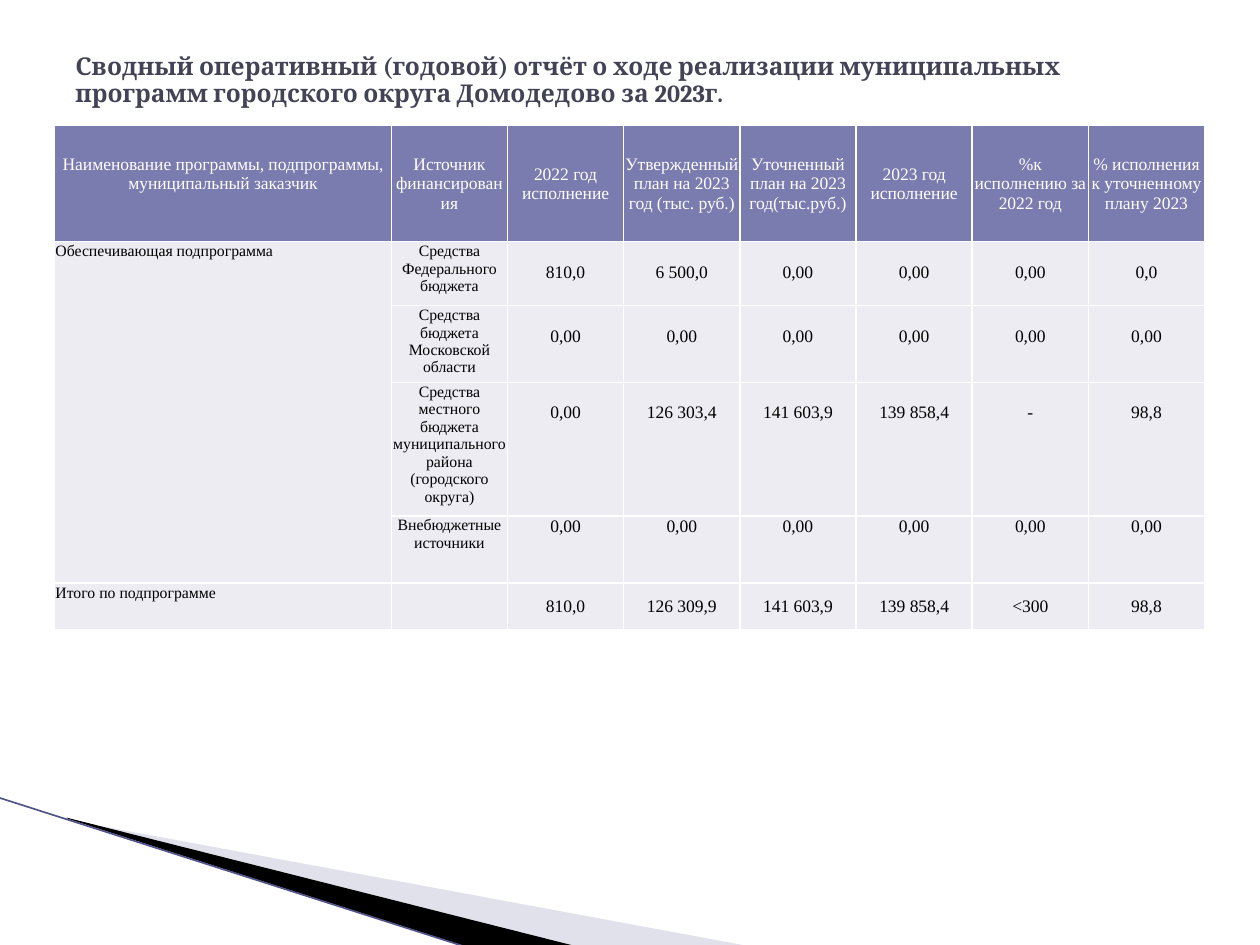
from dataclasses import dataclass
from typing import NamedTuple

from lxml.etree import SubElement
from pptx import Presentation
from pptx.dml.color import RGBColor
from pptx.enum.shapes import MSO_CONNECTOR
from pptx.enum.text import MSO_ANCHOR, PP_ALIGN
from pptx.oxml import parse_xml
from pptx.oxml.ns import nsdecls, qn
from pptx.slide import Slide
from pptx.table import _Cell
from pptx.util import Pt

COLORS = {
    "title": "424456",
    "header": "7A7BAE",
    "body": "ECECF2",
    "white": "FFFFFF",
    "black": "000000",
    "wedge": "B6B6D1",
    "edge": "53548A",
}
TABLE_FONT = "Times New Roman"
INSET = 0.5
BLANK_LINE = 11.5
NAME_WIDTH = 192.4
VALUE_WIDTH = 66.4
HEADER_HEIGHT = 66.5

HEADERS = [
    "Наименование программы, подпрограммы, муниципальный заказчик",
    "Источник финансирования",
    "2022 год исполнение",
    "Утвержденный план на 2023 год (тыс. руб.)",
    "Уточненный план на 2023 год(тыс.руб.)",
    "2023 год исполнение",
    "%к исполнению за 2022 год",
    "% исполнения к уточненному плану 2023",
]


class Wedge(NamedTuple):
    points: list[tuple[float, float]]
    color: str
    opacity: int


class FundingRow(NamedTuple):
    name: str
    source: str
    values: list[str]
    height: float
    top_gap: float = BLANK_LINE
    anchor: MSO_ANCHOR = MSO_ANCHOR.TOP


@dataclass
class CellStyle:
    fill: str = "body"
    color: str = "black"
    size: float = 10
    align: PP_ALIGN = PP_ALIGN.CENTER
    anchor: MSO_ANCHOR = MSO_ANCHOR.TOP
    top_gap: float = 0
    bottom_gap: float = 0


WEDGES = [
    Wedge([(39.6, 468.7), (428.4, 540.7), (328.3, 540.7), (39.6, 468)], "wedge", 40),
    Wedge([(38.2, 467.3), (329, 540.7), (267.8, 541.4), (38.9, 468)], "black", 100),
]

ROWS = [
    FundingRow("Обеспечивающая подпрограмма", "Средства Федерального бюджета",
               ["810,0", "6 500,0", "0,00", "0,00", "0,00", "0,0"], 36.6),
    FundingRow("", "Средства бюджета Московской области", ["0,00"] * 6, 40.6),
    FundingRow("", "Средства местного бюджета муниципального района (городского округа)",
               ["0,00", "126 303,4", "141 603,9", "139 858,4", "-", "98,8"], 70.6),
    FundingRow("", "Внебюджетные источники", ["0,00"] * 6, 38.4, top_gap=0),
    FundingRow("Итого по подпрограмме", "",
               ["810,0", "126 309,9", "141 603,9", "139 858,4", "<300", "98,8"],
               26.5, top_gap=0, anchor=MSO_ANCHOR.MIDDLE),
]


def rgb(name: str) -> RGBColor:
    return RGBColor.from_string(COLORS[name])


def draw_wedge(slide: Slide, wedge: Wedge) -> None:
    corners = [(Pt(x), Pt(y)) for x, y in wedge.points]
    builder = slide.shapes.build_freeform(*corners[0])
    builder.add_line_segments(corners[1:])
    band = builder.convert_to_shape()
    band.shadow.inherit = False
    band.line.fill.background()
    band.fill.solid()
    band.fill.fore_color.rgb = rgb(wedge.color)
    if wedge.opacity < 100:
        tint = band.fill._xPr.find(".//" + qn("a:srgbClr"))
        SubElement(tint, qn("a:alpha"), val=str(wedge.opacity * 1000))


def draw_edge(slide: Slide) -> None:
    edge = slide.shapes.add_connector(
        MSO_CONNECTOR.STRAIGHT, Pt(-0.7), Pt(455.8), Pt(267.1), Pt(541.4))
    edge.line.color.rgb = rgb("edge")
    edge.line.width = Pt(0.95)
    SubElement(edge._element.spPr, qn("a:effectLst"))


def draw_title(slide: Slide) -> None:
    heading = slide.shapes.add_textbox(Pt(36), Pt(21.6), Pt(648), Pt(49.7))
    frame = heading.text_frame
    frame.word_wrap = True
    frame.vertical_anchor = MSO_ANCHOR.MIDDLE
    frame.text = ("Сводный оперативный (годовой) отчёт о ходе реализации "
                  "муниципальных программ городского округа Домодедово за 2023г.")
    paragraph = frame.paragraphs[0]
    paragraph.line_spacing = 0.9
    font = paragraph.runs[0].font
    font.name = "Cambria"
    font.size = Pt(14)
    font.bold = True
    font.color.rgb = rgb("title")


def fill_cell(cell: _Cell, text: str, style: CellStyle) -> None:
    cell.text_frame.text = text
    cell.vertical_anchor = style.anchor
    cell.margin_left = cell.margin_right = Pt(INSET)
    cell.margin_top = Pt(INSET + style.top_gap)
    cell.margin_bottom = Pt(style.bottom_gap)
    cell.fill.solid()
    cell.fill.fore_color.rgb = rgb(style.fill)
    paragraph = cell.text_frame.paragraphs[0]
    paragraph.alignment = style.align
    paragraph.font.size = Pt(style.size)
    for run in paragraph.runs:
        run.font.name = TABLE_FONT
        run.font.size = Pt(style.size)
        run.font.bold = False
        run.font.color.rgb = rgb(style.color)
    properties = cell._tc.get_or_add_tcPr()
    for position, side in enumerate(("lnL", "lnR", "lnT", "lnB")):
        properties.insert(position, parse_xml(
            f'<a:{side} {nsdecls("a")} w="{Pt(1)}"><a:solidFill>'
            f'<a:srgbClr val="{COLORS["white"]}"/></a:solidFill></a:{side}>'))


def draw_report(slide: Slide) -> None:
    heights = [HEADER_HEIGHT] + [row.height for row in ROWS]
    widths = [NAME_WIDTH] + [VALUE_WIDTH] * (len(HEADERS) - 1)
    report = slide.shapes.add_table(
        len(heights), len(widths), Pt(31.2), Pt(71.6),
        Pt(sum(widths)), Pt(sum(heights))).table
    report.first_row = False
    report.horz_banding = False
    for column, width in zip(report.columns, widths):
        column.width = Pt(width)
    for line, height in zip(report.rows, heights):
        line.height = Pt(height)

    for index, label in enumerate(HEADERS):
        fill_cell(report.cell(0, index), label, CellStyle(
            "header", "white", anchor=MSO_ANCHOR.MIDDLE,
            bottom_gap=0 if index else BLANK_LINE))
    for index, row in enumerate(ROWS, start=1):
        fill_cell(report.cell(index, 0), row.name, CellStyle(size=9, align=PP_ALIGN.LEFT))
        fill_cell(report.cell(index, 1), row.source, CellStyle(size=9))
        for column, value in enumerate(row.values, start=2):
            fill_cell(report.cell(index, column), value,
                      CellStyle(anchor=row.anchor, top_gap=row.top_gap))
    report.cell(1, 0).merge(report.cell(4, 0))


def main() -> None:
    presentation = Presentation()
    presentation.slide_width = Pt(720)
    presentation.slide_height = Pt(540)
    slide = presentation.slides.add_slide(presentation.slide_layouts[6])
    for wedge in WEDGES:
        draw_wedge(slide, wedge)
    draw_edge(slide)
    draw_title(slide)
    draw_report(slide)
    presentation.save("out.pptx")


if __name__ == "__main__":
    main()
